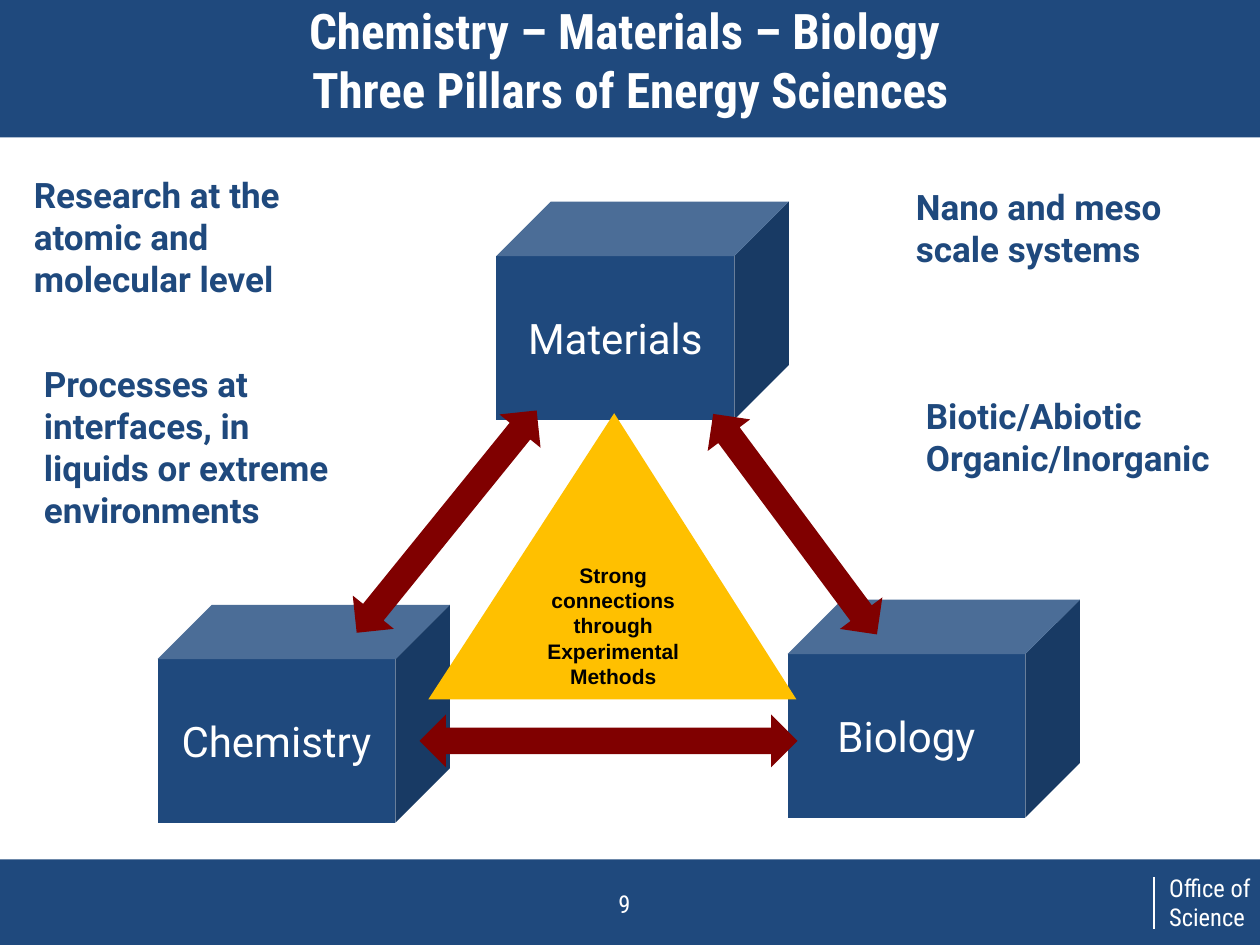
from dataclasses import dataclass

from pptx import Presentation
from pptx import util as u
from pptx.dml.color import RGBColor
from pptx.enum import shapes, text
from pptx.oxml import ns, xmlchemy

KIND = shapes.MSO_SHAPE
ALIGN = text.PP_ALIGN


@dataclass(frozen=True)
class Theme:
    navy: str = "1F497D"
    white: str = "FFFFFF"
    black: str = "000000"
    red: str = "800000"
    gold: str = "FFC000"
    head: str = "Roboto Condensed"
    body: str = "Roboto"
    core: str = "Arial"
    title: int = 28
    cube: int = 24
    note: int = 20
    foot: int = 14
    small: int = 12


class Deck:
    """Holds the theme and the current slide."""

    def __init__(self, theme):
        self.theme = theme
        self.file = Presentation()
        self.file.slide_width = u.Inches(10)
        self.file.slide_height = u.Inches(7.5)
        self.slide = self.file.slides.add_slide(self.file.slide_layouts[5])

    def style(self, frame, font, size, color, bold=False, align=ALIGN.LEFT):
        for para in frame.paragraphs:
            para.alignment = align
            for run in para.runs:
                run.font.name = font
                run.font.size = u.Pt(size)
                run.font.bold = bold
                run.font.color.rgb = RGBColor.from_string(color)

    def shape(self, kind, box, fill, turn=0):
        item = self.slide.shapes.add_shape(kind, *map(u.Inches, box))
        item.shadow.inherit = False
        item.fill.solid()
        item.fill.fore_color.rgb = RGBColor.from_string(fill)
        item.line.fill.background()
        item.rotation = turn
        return item

    def label(self, words, box, font, size, color, bold=False, wrap=True):
        frame = self.slide.shapes.add_textbox(*map(u.Inches, box)).text_frame
        frame.word_wrap = wrap
        frame.auto_size = text.MSO_AUTO_SIZE.SHAPE_TO_FIT_TEXT
        frame.text = words
        self.style(frame, font, size, color, bold)

    def line(self, x1, y1, x2, y2, color):
        rule = self.slide.shapes.add_connector(
            shapes.MSO_CONNECTOR.STRAIGHT, *map(u.Inches, (x1, y1, x2, y2)))
        rule.line.color.rgb = RGBColor.from_string(color)
        rule.line.width = u.Pt(1)
        props = rule._element.spPr
        props.append(xmlchemy.OxmlElement("a:effectLst"))

    def title(self, words):
        t = self.theme
        item = self.slide.shapes.title
        item.left, item.top = 0, 0
        item.width, item.height = u.Inches(10), u.Inches(0.94)
        frame = item.text_frame
        frame.auto_size = text.MSO_AUTO_SIZE.NONE
        frame.vertical_anchor = text.MSO_ANCHOR.MIDDLE
        frame.text = words
        self.style(frame, t.head, t.title, t.white, True, ALIGN.CENTER)
        # Bring the title in front of the header band
        item.element.getparent().append(item.element)

    def cube(self, name, left, top):
        t = self.theme
        frame = self.shape(KIND.CUBE, (left, top, 2.32, 1.73), t.navy).text_frame
        frame.vertical_anchor = text.MSO_ANCHOR.MIDDLE
        frame.text = name
        self.style(frame, t.body, t.cube, t.white, align=ALIGN.CENTER)

    def core(self, words, box):
        t = self.theme
        item = self.shape(KIND.ISOSCELES_TRIANGLE, box, t.gold)
        item.adjustments[0] = 0.505
        frame = item.text_frame
        frame.vertical_anchor = text.MSO_ANCHOR.TOP
        frame.text = words
        self.style(frame, t.core, t.small, t.black, True, ALIGN.CENTER)


def main():
    t = Theme()
    deck = Deck(t)

    # Header and footer bands
    for top, high in ((0, 1.09), (6.82, 0.7)):
        deck.shape(KIND.RECTANGLE, (0, top, 10, high), t.navy)
    deck.line(9.16, 6.96, 9.16, 7.37, t.white)
    deck.label("Office of\vScience", (9.18, 6.88, 0.85, 0.57),
               t.head, t.foot, t.white)
    deck.label("9", (4.81, 7.01, 0.37, 0.34),
               t.head, t.foot, t.white, wrap=False)
    deck.title("Chemistry – Materials – Biology \vThree Pillars of Energy Sciences")

    # Three pillars
    for name, left, top in (("Chemistry", 1.25, 4.8), ("Biology", 6.25, 4.76),
                            ("Materials", 3.94, 1.6)):
        deck.cube(name, left, top)

    # Research themes
    for words, box in (
        ("Research at the atomic and molecular level", (0.17, 1.33, 2.65, 0.77)),
        ("Nano and meso scale systems", (7.17, 1.42, 2.4, 0.77)),
        ("Processes at interfaces, in liquids or extreme environments",
         (0.25, 2.83, 2.65, 1.11)),
        ("Biotic/Abiotic\nOrganic/Inorganic", (7.25, 3.08, 2.65, 0.77)),
    ):
        deck.label(words, box, t.body, t.note, t.navy, bold=True)

    # Arrows between the pillars
    for left, top, wide, turn in ((2.41, 3.93, 2.27, 309), (3.33, 5.67, 3, 0),
                                  (5.22, 3.95, 2.18, 53.4)):
        deck.shape(KIND.LEFT_RIGHT_ARROW, (left, top, wide, 0.42), t.red, turn)

    # Shared methods in the centre
    deck.core("Strong connections\nthrough\nExperimental Methods",
              (3.4, 3.28, 2.92, 2.27))

    deck.file.save("out.pptx")


if __name__ == "__main__":
    main()
